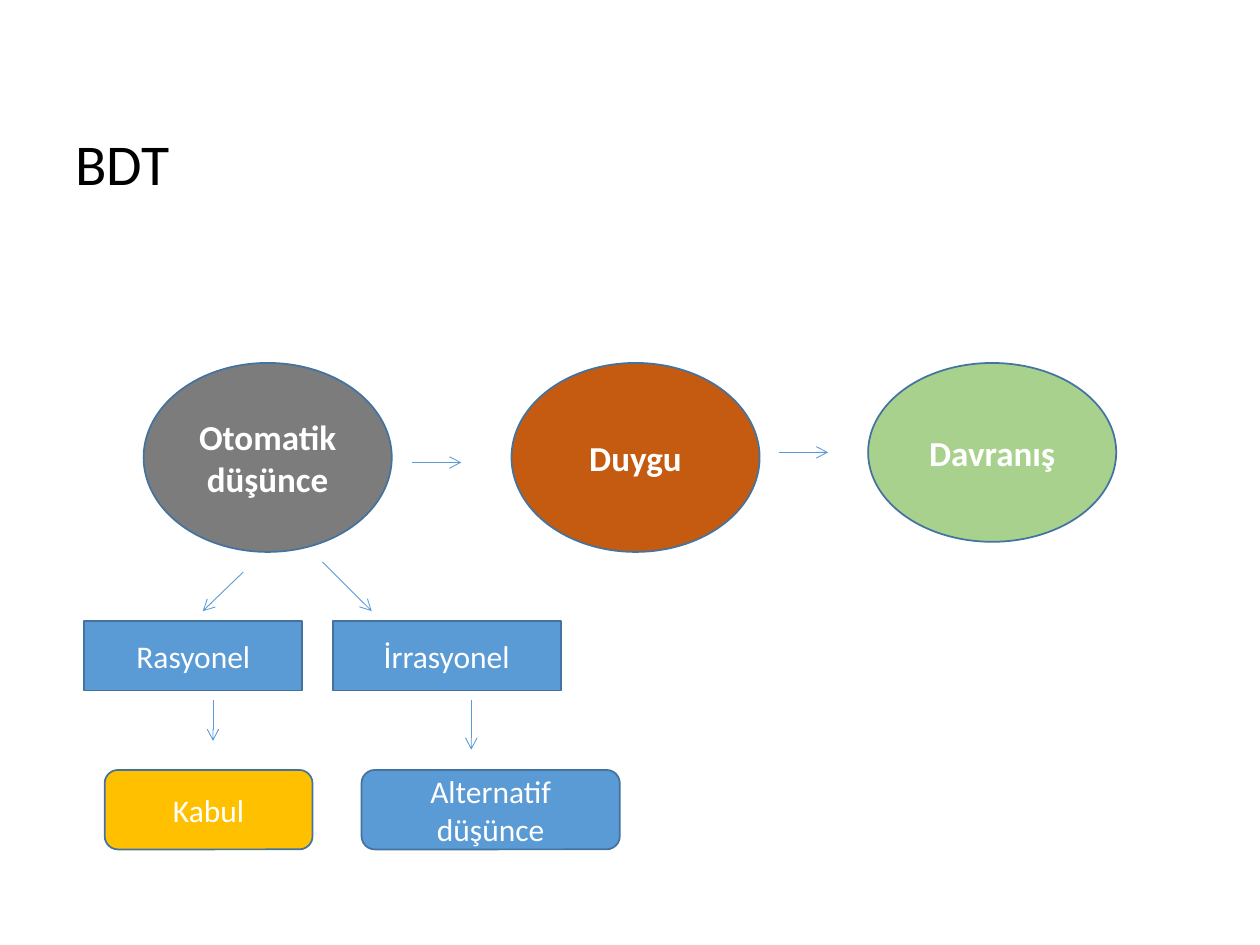
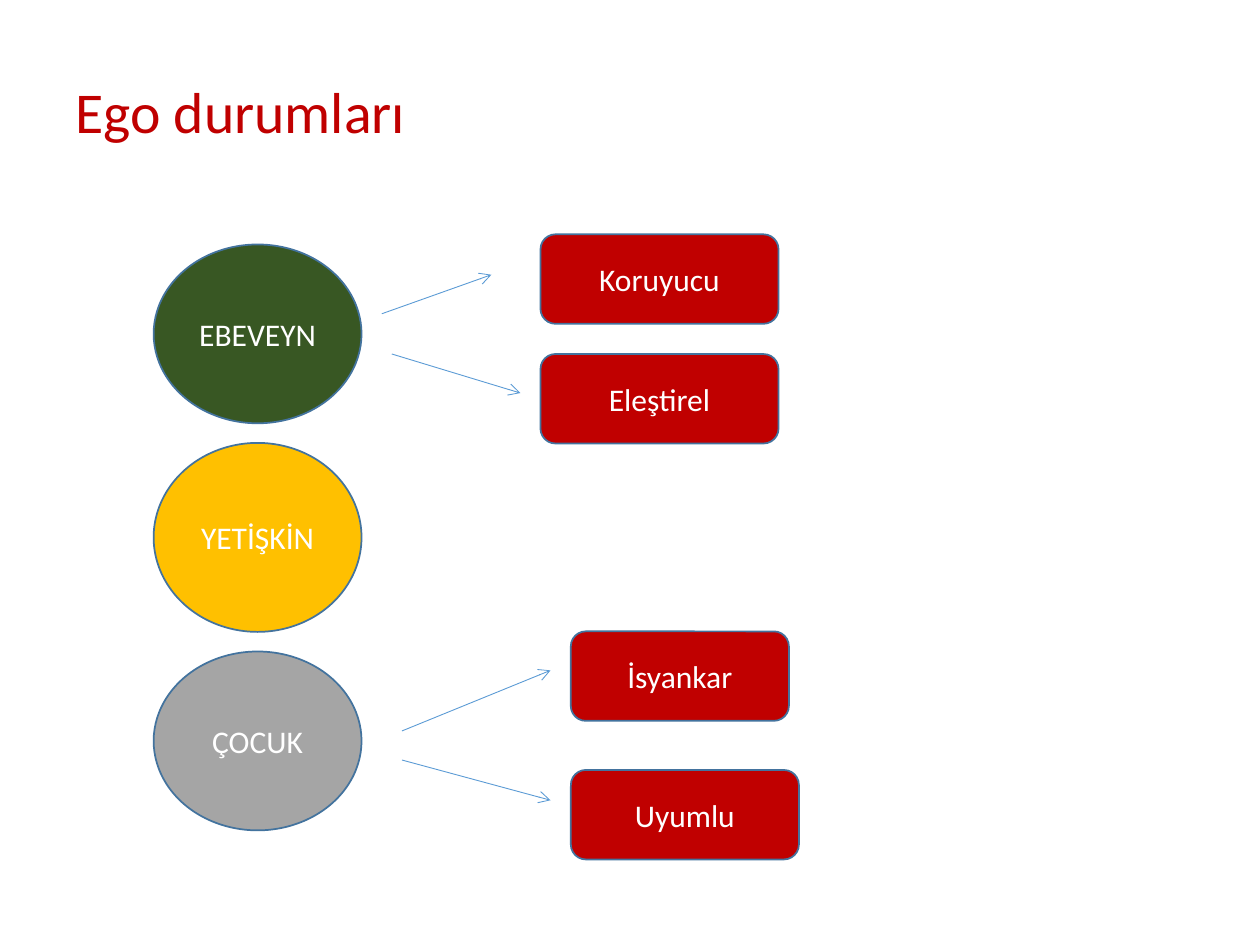
import pptx
import pptx.dml.color
import pptx.enum.shapes
import pptx.enum.text
import pptx.oxml
import pptx.oxml.ns
import pptx.util

Pt = pptx.util.Pt
SHAPE = pptx.enum.shapes.MSO_SHAPE
FONT = "Calibri"
COLOURS = {
    "black": "000000", "white": "FFFFFF", "red": "C00000", "outline": "43739E",
    "blue": "5B9BD5", "grey": "7C7C7C", "orange": "C55A11", "light green": "A9D18E",
    "yellow": "FFC000", "dark green": "385723", "light grey": "A5A5A5",
}


def colour(name):
    return pptx.dml.color.RGBColor.from_string(COLOURS[name])


def write(frame, wording, size, ink, bold=False):
    frame.word_wrap = True
    frame.vertical_anchor = pptx.enum.text.MSO_ANCHOR.MIDDLE
    paragraph = frame.paragraphs[0]
    run = paragraph.add_run()
    run.text = wording
    run.font.name = FONT
    run.font.size = Pt(size)
    run.font.bold = bold
    run.font.color.rgb = colour(ink)
    return paragraph


def add_title(slide, wording, top, ink):
    title = slide.shapes.add_textbox(Pt(36), Pt(top), Pt(648), Pt(45))
    write(title.text_frame, wording, 33, ink).line_spacing = 0.9


def add_node(slide, kind, box, wording, fill, size=18, bold=False):
    node = slide.shapes.add_shape(kind, *map(Pt, box))
    node.shadow.inherit = False
    node.fill.solid()
    node.fill.fore_color.rgb = colour(fill)
    node.line.color.rgb = colour("outline")
    node.line.width = Pt(1)
    paragraph = write(node.text_frame, wording, size, "white", bold)
    paragraph.alignment = pptx.enum.text.PP_ALIGN.CENTER


def add_arrow(slide, left, top, start, end):
    """Draw an arrow whose ends are offsets from (left, top)."""
    arrow = slide.shapes.add_connector(
        pptx.enum.shapes.MSO_CONNECTOR.STRAIGHT,
        Pt(left + start[0]), Pt(top + start[1]), Pt(left + end[0]), Pt(top + end[1]))
    arrow.line.color.rgb = colour("blue")
    arrow.line.width = Pt(0.5)
    head = pptx.oxml.parse_xml(
        f'<a:tailEnd {pptx.oxml.ns.nsdecls("a")} type="arrow"/>')
    arrow.line._get_or_add_ln().append(head)
    no_effects = pptx.oxml.parse_xml(f'<a:effectLst {pptx.oxml.ns.nsdecls("a")}/>')
    arrow._element.spPr.append(no_effects)


def add_thought_chain(slide, left, top):
    """Thought, emotion and behaviour in a row, joined by short arrows."""
    width = 141.8
    for wording, fill, x, height in (
            ("Otomatik düşünce", "grey", 0, 108),
            ("Duygu", "orange", 210.2, 108),
            ("Davranış", "light green", 414, 102.2)):
        add_node(slide, SHAPE.OVAL, (left + x, top, width, height), wording, fill, 20, True)
    for x, y in ((153.3, 56.9), (362.9, 51.1)):
        add_arrow(slide, left, top, (x, y), (x + 28.2, y))


def add_thought_branch(slide, left, top, thought, outcome, arrow_in, arrow_down):
    """One kind of thought, the arrow into it, and the outcome below it."""
    wording, width = thought
    add_arrow(slide, left, top, *arrow_in)
    add_node(slide, SHAPE.RECTANGLE, (left, top, width, 39.6), wording, "blue")
    x, end = arrow_down
    add_arrow(slide, left, top, (x, 45.3), (x, end))
    wording, fill, x, width = outcome
    add_node(slide, SHAPE.ROUNDED_RECTANGLE, (left + x, top + 85, width, 45.4), wording, fill)


def add_ego_state(slide, left, top, height, wording, fill, aspects):
    """An ego state with arrows to the aspects on its right."""
    add_node(slide, SHAPE.OVAL, (left, top, 118.8, height), wording, fill)
    for aspect, x, y, width, start, end in aspects:
        add_arrow(slide, left, top, start, end)
        add_node(slide, SHAPE.ROUNDED_RECTANGLE, (left + x, top + y, width, 51.1),
                 aspect, "red")


def build_therapy_slide(slide):
    add_title(slide, "BDT", 73, "black")
    add_thought_chain(slide, 82.1, 207.4)
    add_thought_branch(slide, 48.2, 355, ("Rasyonel", 124.6),
                       ("Kabul", "yellow", 11.6, 118.8),
                       ((90.8, -28.1), (67.7, -5.8)), (73.5, 68.4))
    add_thought_branch(slide, 190.1, 355, ("İrrasyonel", 130.3),
                       ("Alternatif düşünce", "blue", 16.5, 147.6),
                       ((-5.8, -33.9), (22.3, -5.8)), (79.2, 73.4))


def build_ego_slide(slide):
    add_title(slide, "Ego durumları", 43, "red")
    parent_aspects = (
        ("Koruyucu", 221.1, -5.8, 136, (130.4, 39.6), (193, 17.3)),
        ("Eleştirel", 221.1, 62.6, 136, (136.1, 62.6), (209.6, 84.9)))
    child_aspects = (
        ("İsyankar", 238.4, -11.5, 124.6, (141.9, 45.4), (226.8, 10.8)),
        ("Uyumlu", 238.4, 67.7, 130.3, (141.9, 62), (226.8, 85)))
    top, gap = 139.7, 11.2
    for wording, fill, height, aspects in (
            ("EBEVEYN", "dark green", 102.2, parent_aspects),
            ("YETİŞKİN", "yellow", 108, ()),
            ("ÇOCUK", "light grey", 102.2, child_aspects)):
        add_ego_state(slide, 87.8, top, height, wording, fill, aspects)
        top += height + gap


def main():
    deck = pptx.Presentation()
    deck.slide_width, deck.slide_height = Pt(720), Pt(540)
    blank = deck.slide_layouts[6]
    for build in (build_therapy_slide, build_ego_slide):
        build(deck.slides.add_slide(blank))
    deck.save("out.pptx")


if __name__ == "__main__":
    main()
